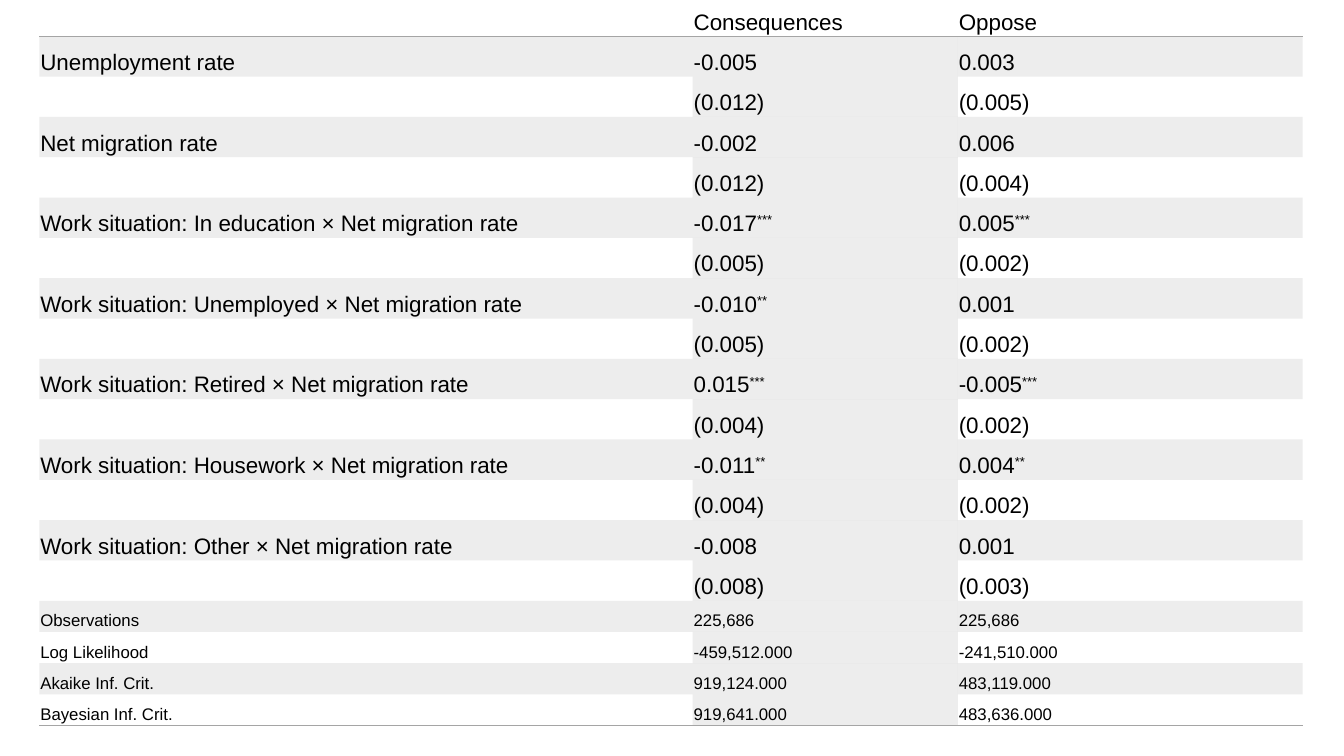
from lxml.etree import SubElement
from pptx import Presentation
from pptx.dml.color import RGBColor
from pptx.enum.text import MSO_ANCHOR
from pptx.oxml.ns import qn
from pptx.util import Inches, Pt

GREY = RGBColor(0xA5, 0xA5, 0xA5)
BLACK = RGBColor(0, 0, 0)
NO_STYLE = "{2D5ABB26-0587-4C30-8999-92F81FD0307C}"
INSET = Inches(0.01)
COLUMN_WIDTHS = (6.48, 2.63, 3.42)
ROW_HEIGHT, SUMMARY_HEIGHT = 0.4, 0.31

# Label, then coefficient and standard error for each of the two models
ESTIMATES = [
    ("Unemployment rate", "-0.005", "(0.012)", "0.003", "(0.005)"),
    ("Net migration rate", "-0.002", "(0.012)", "0.006", "(0.004)"),
    ("Work situation: In education × Net migration rate", "-0.017***", "(0.005)", "0.005***", "(0.002)"),
    ("Work situation: Unemployed × Net migration rate", "-0.010**", "(0.005)", "0.001", "(0.002)"),
    ("Work situation: Retired × Net migration rate", "0.015***", "(0.004)", "-0.005***", "(0.002)"),
    ("Work situation: Housework × Net migration rate", "-0.011**", "(0.004)", "0.004**", "(0.002)"),
    ("Work situation: Other × Net migration rate", "-0.008", "(0.008)", "0.001", "(0.003)"),
]
SUMMARY = [
    ("Observations", "225,686", "225,686"),
    ("Log Likelihood", "-459,512.000", "-241,510.000"),
    ("Akaike Inf. Crit.", "919,124.000", "483,119.000"),
    ("Bayesian Inf. Crit.", "919,641.000", "483,636.000"),
]

rows = [("", "Consequences", "Oppose")]
for label, consequences, consequences_error, oppose, oppose_error in ESTIMATES:
    rows.append((label, consequences, oppose))
    rows.append(("", consequences_error, oppose_error))
first_summary = len(rows)
rows += SUMMARY
last_row = len(rows) - 1


def add_border(cell, side):
    line = SubElement(cell._tc.get_or_add_tcPr(), qn(f"a:{side}"), w=str(Pt(1)))
    fill = SubElement(line, qn("a:solidFill"))
    SubElement(fill, qn("a:srgbClr"), val=str(GREY))


def add_span(para, text, size):
    span = para.add_run()
    span.text = text
    span.font.name = "Arial"
    span.font.size = Pt(size)
    span.font.color.rgb = BLACK
    return span


deck = Presentation()
deck.slide_width, deck.slide_height = Inches(13.33), Inches(7.5)
page = deck.slides.add_slide(deck.slide_layouts[6])
height = first_summary * ROW_HEIGHT + len(SUMMARY) * SUMMARY_HEIGHT
frame = page.shapes.add_table(len(rows), len(COLUMN_WIDTHS), Inches(0.39), Inches(-0.04),
                              Inches(sum(COLUMN_WIDTHS)), Inches(height))
table = frame.table
table.first_row = table.horz_banding = False
table._tbl.tblPr.find(qn("a:tableStyleId")).text = NO_STYLE
for column, width in zip(table.columns, COLUMN_WIDTHS):
    column.width = Inches(width)

for row_index, texts in enumerate(rows):
    in_summary = row_index >= first_summary
    table.rows[row_index].height = Inches(SUMMARY_HEIGHT if in_summary else ROW_HEIGHT)
    for column_index, text in enumerate(texts):
        cell = table.cell(row_index, column_index)
        cell.vertical_anchor = MSO_ANCHOR.MIDDLE
        cell.margin_left = cell.margin_right = cell.margin_top = cell.margin_bottom = INSET
        if row_index == 0:
            add_border(cell, "lnT")
        if row_index in (0, last_row):
            add_border(cell, "lnB")

        # Every second row is shaded, and so is the middle column below the header
        if row_index % 2 or (column_index == 1 and row_index > 0):
            cell.fill.solid()
            cell.fill.fore_color.rgb = GREY
            color = cell._tc.tcPr.find(qn("a:solidFill")).find(qn("a:srgbClr"))
            SubElement(color, qn("a:alpha"), val="20000")
        else:
            cell.fill.background()

        if text:
            para = cell.text_frame.paragraphs[0]
            para.line_spacing = 1.5
            size = 12 if in_summary else 16
            value = text.rstrip("*")
            add_span(para, value, size)
            if value != text:
                stars = add_span(para, text[len(value):], size)
                stars._r.get_or_add_rPr().set("baseline", "30000")

deck.save("out.pptx")
